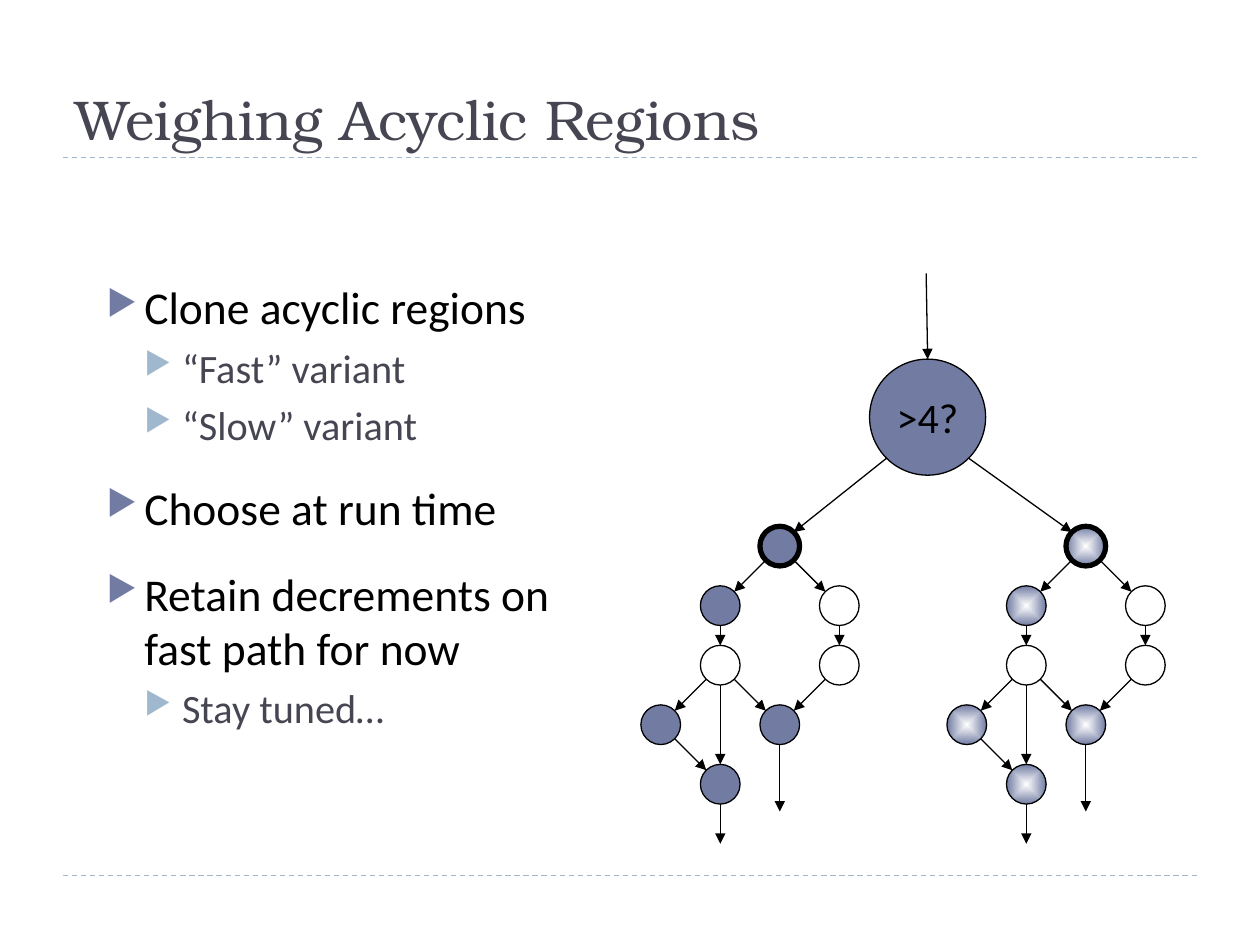
from lxml.etree import SubElement
from pptx import Presentation
from pptx.dml.color import RGBColor
from pptx.enum.dml import MSO_LINE
from pptx.enum.shapes import MSO_CONNECTOR, MSO_SHAPE
from pptx.enum.text import MSO_ANCHOR, PP_ALIGN
from pptx.oxml import parse_xml
from pptx.oxml.ns import nsdecls, qn
from pptx.util import Cm, Pt

COLORS = {"title": "464653", "accent": "727CA3", "light": "9FB8CD",
          "black": "000000", "white": "FFFFFF"}
RGB = {name: RGBColor.from_string(value) for name, value in COLORS.items()}

prs = Presentation()
prs.slide_width, prs.slide_height = Cm(25.4), Cm(19.05)
s = prs.slides.add_slide(prs.slide_layouts[6])


def add_line(x1, y1, x2, y2, color="black", arrow=True):
    ln = s.shapes.add_connector(MSO_CONNECTOR.STRAIGHT, Cm(x1), Cm(y1), Cm(x2), Cm(y2))
    ln.line.color.rgb = RGB[color]
    ln.line.width = Pt(0.75)
    if arrow:
        SubElement(ln.line._get_or_add_ln(), qn("a:tailEnd"), type="triangle")
    else:
        ln.line.dash_style = MSO_LINE.DASH
    SubElement(ln._element.spPr, qn("a:effectLst"))


def add_node(x, y, radius, fill, width=0.75):
    sp = s.shapes.add_shape(MSO_SHAPE.FLOWCHART_CONNECTOR, Cm(x - radius), Cm(y - radius),
                            Cm(2 * radius), Cm(2 * radius))
    sp.shadow.inherit = False
    if fill == "gradient":
        sp.fill.gradient()
        for stop, color in zip(sp.fill.gradient_stops, ("white", "accent")):
            stop.color.rgb = RGB[color]
        grad = sp._element.spPr.find(qn("a:gradFill"))
        grad.replace(grad.find(qn("a:lin")), parse_xml(
            f'<a:path {nsdecls("a")} path="shape">'
            '<a:fillToRect l="50000" t="50000" r="50000" b="50000"/></a:path>'))
    else:
        sp.fill.solid()
        sp.fill.fore_color.rgb = RGB[fill]
    sp.line.color.rgb = RGB["black"]
    sp.line.width = Pt(width)
    return sp


for y in (17.65, 3.18):
    add_line(1.27, y, 24.13, y, "light", arrow=False)

tf = s.shapes.add_textbox(Cm(1.27), Cm(0.64), Cm(22.86), Cm(2.54)).text_frame
tf.word_wrap = True
tf.vertical_anchor = MSO_ANCHOR.BOTTOM
r = tf.paragraphs[0].add_run()
r.text = "Weighing Acyclic Regions"
r.font.name, r.font.size = "TeX Gyre Bonum", Pt(32)
r.font.color.rgb = RGB["title"]

LEVELS = [("accent", "black", 26, 18), ("light", "title", 23, 5)]
POINTS = [(0, "Clone acyclic regions"), (1, "“Fast” variant"), (1, "“Slow” variant"),
          (0, "Choose at run time"), (0, "Retain decrements on fast path for now"),
          (1, "Stay tuned…")]
tf = s.shapes.add_textbox(Cm(1.9), Cm(5.51), Cm(10.6), Cm(11.43)).text_frame
tf.word_wrap = True
for i, (level, text) in enumerate(POINTS):
    bullet, color, size, space = LEVELS[level]
    p = tf.paragraphs[0] if i == 0 else tf.add_paragraph()
    p.level = level
    pPr = p._p.get_or_add_pPr()
    pPr.set("marL", str(Cm(0.76 * (level + 1))))
    pPr.set("indent", str(Cm(-0.76)))
    SubElement(SubElement(pPr, qn("a:buClr")), qn("a:srgbClr"), val=COLORS[bullet])
    SubElement(pPr, qn("a:buSzPct"), val="76000")
    SubElement(pPr, qn("a:buChar"), char="▶")
    if i:
        p.space_before = Pt(space)
    r = p.add_run()
    r.text = text
    r.font.name, r.font.size = "Calibri", Pt(size)
    r.font.color.rgb = RGB[color]

STEP, RADIUS = 1.2, 0.4
DIAGONAL = 0.5 ** 0.5
TOP = 11.01
HOT = [(2, 0), (1, 1), (0, 3), (2, 3), (1, 4)]
COLD = [(3, 1), (1, 2), (3, 2)]
EDGES = [((2, 0), (3, 1)), ((2, 0), (1, 1)), ((1, 1), (1, 2)), ((1, 2), (0, 3)),
         ((1, 2), (1, 4)), ((1, 2), (2, 3)), ((3, 1), (3, 2)), ((0, 3), (1, 4)),
         ((3, 2), (2, 3))]
EXITS = [((1, 4), 0.8), ((2, 3), 1.35)]

for left, hot_fill in ((13.32, "accent"), (19.49, "gradient")):
    for col, row in COLD + HOT:
        add_node(left + col * STEP, TOP + row * STEP, RADIUS,
                 hot_fill if (col, row) in HOT else "white", 3 if row == 0 else 0.75)
    for (c1, r1), (c2, r2) in EDGES:
        side = (c2 > c1) - (c2 < c1)
        dx = side * RADIUS * DIAGONAL
        dy = RADIUS * (DIAGONAL if side else 1)
        add_line(left + c1 * STEP + dx, TOP + r1 * STEP + dy,
                 left + c2 * STEP - dx, TOP + r2 * STEP - dy)
    for (col, row), length in EXITS:
        x, y = left + col * STEP, TOP + row * STEP + RADIUS
        add_line(x, y, x, y + length)

ROOT_X, ROOT_Y, ROOT_R = 18.7, 8.41, 1.17
sp = add_node(ROOT_X, ROOT_Y, ROOT_R, "accent")
tf = sp.text_frame
tf.word_wrap = False
tf.vertical_anchor = MSO_ANCHOR.MIDDLE
p = tf.paragraphs[0]
p.alignment = PP_ALIGN.CENTER
r = p.add_run()
r.text = ">4?"
r.font.name, r.font.size = "Calibri", Pt(24)
r.font.color.rgb = RGB["black"]
for side, x in ((-1, 15.72), (1, 21.89)):
    add_line(ROOT_X + side * ROOT_R * DIAGONAL, ROOT_Y + ROOT_R * DIAGONAL,
             x - side * RADIUS * DIAGONAL, TOP - RADIUS * DIAGONAL)
add_line(18.67, 5.51, ROOT_X, ROOT_Y - ROOT_R)

prs.save("out.pptx")
